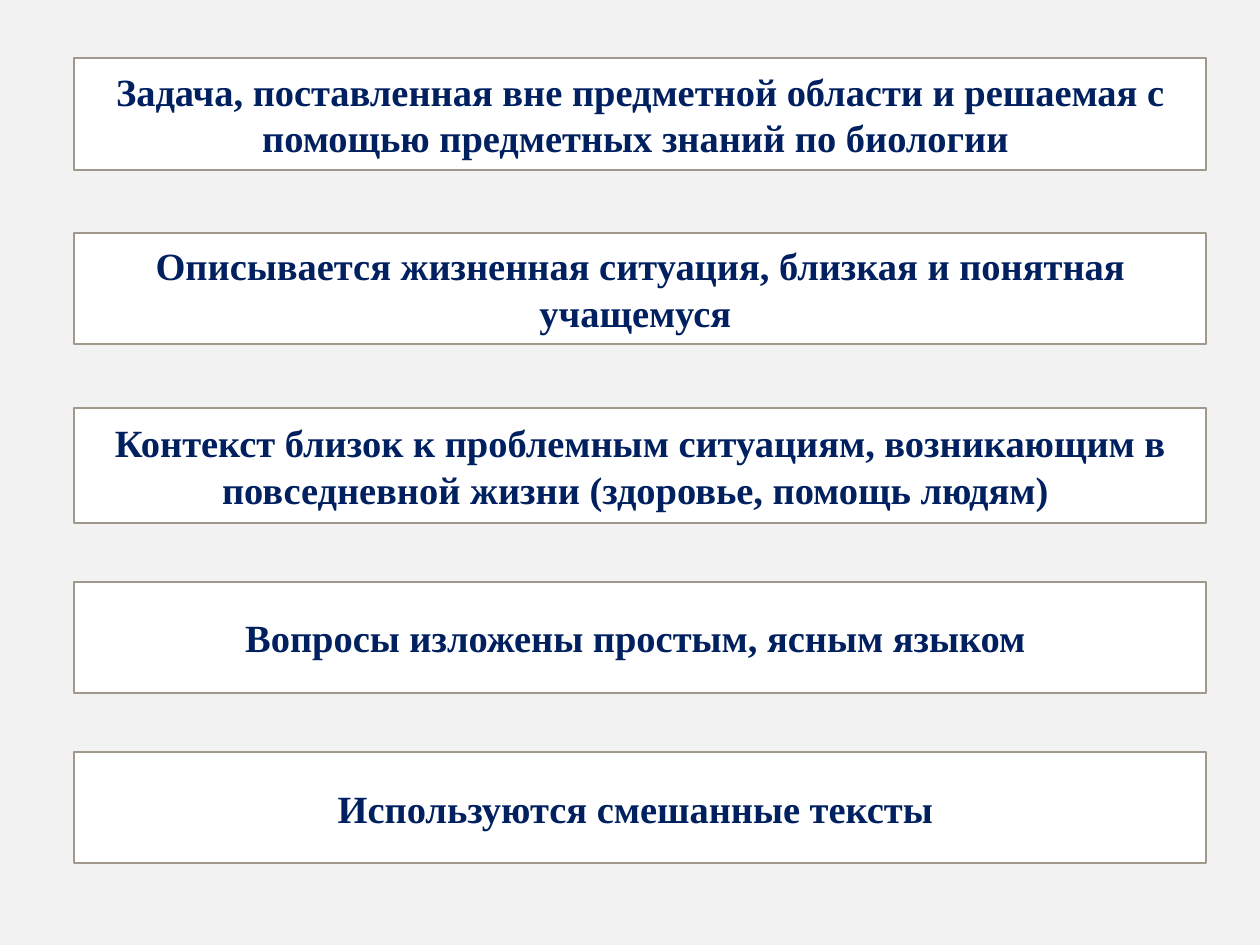
from pptx import Presentation
from pptx.dml.color import RGBColor as Rgb
from pptx.enum.shapes import MSO_SHAPE as Shape
from pptx.enum.text import MSO_ANCHOR as Anchor, PP_ALIGN as Align
from pptx.util import Inches, Pt

LEFT, WIDTH = 0.59, 8.98
FONT = {"name": "Times New Roman", "size": Pt(22), "bold": True}

# Top, height and wording of each box
BOXES = [
    (0.46, 0.89, "Задача, поставленная вне предметной области и решаемая с "
                 "помощью предметных знаний по биологии "),
    (1.85, 0.88, "Описывается жизненная ситуация, близкая и понятная учащемуся "),
    (3.24, 0.91, "Контекст близок к проблемным ситуациям, возникающим в "
                 "повседневной жизни (здоровье, помощь людям) "),
    (4.62, 0.88, "Вопросы изложены простым, ясным языком "),
    (5.97, 0.88, "Используются смешанные тексты "),
]


def paint(fill, color):
    fill.solid()
    fill.fore_color.rgb = Rgb.from_string(color)


def add_box(slide, top, height, text):
    box = slide.shapes.add_shape(Shape.RECTANGLE, Inches(LEFT), Inches(top),
                                 Inches(WIDTH), Inches(height))
    box.shadow.inherit = False
    paint(box.fill, "FFFFFF")
    paint(box.line.fill, "A0988C")
    box.line.width = Pt(1)

    # Centred text
    frame = box.text_frame
    frame.word_wrap = True
    frame.vertical_anchor = Anchor.MIDDLE
    para = frame.paragraphs[0]
    para.alignment = Align.CENTER
    run = para.add_run()
    run.text = text
    for key, value in FONT.items():
        setattr(run.font, key, value)
    paint(run.font.fill, "002060")


def main():
    deck = Presentation()
    deck.slide_width, deck.slide_height = Inches(10), Inches(7.5)
    slide = deck.slides.add_slide(deck.slide_layouts[6])
    paint(slide.background.fill, "F2F2F2")
    for top, height, text in BOXES:
        add_box(slide, top, height, text)
    deck.save("out.pptx")


if __name__ == "__main__":
    main()
